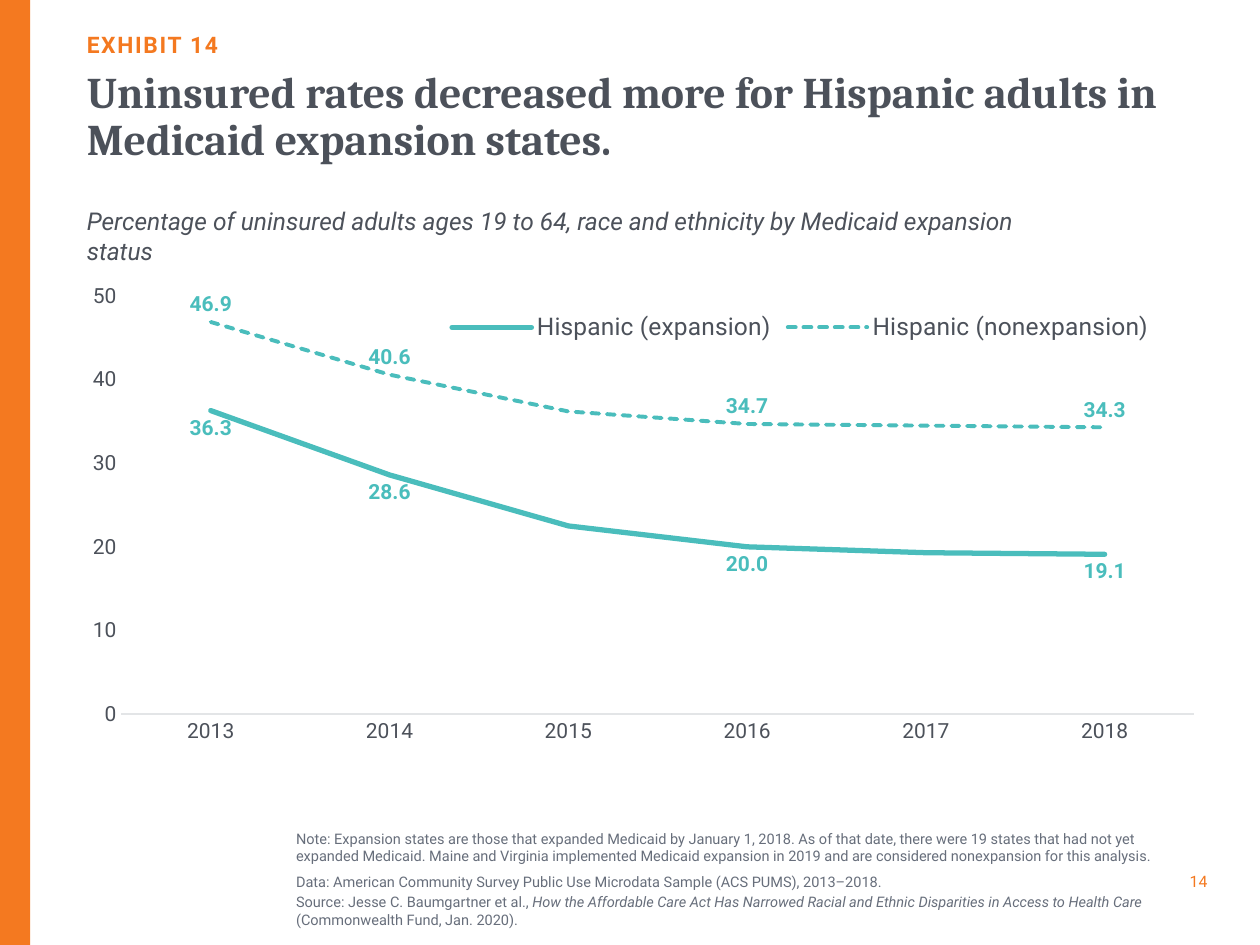
import pptx
import pptx.chart.data
import pptx.dml.color
import pptx.enum.chart
import pptx.enum.dml
import pptx.enum.shapes
import pptx.enum.text
import pptx.oxml
import pptx.oxml.ns
import pptx.util
from dataclasses import dataclass

Cm, Pt = pptx.util.Cm, pptx.util.Pt
RGB = pptx.dml.color.RGBColor.from_string
QN = pptx.oxml.ns.qn
CH = pptx.enum.chart
DASH = pptx.enum.dml.MSO_LINE
ANCHOR = pptx.enum.text.MSO_ANCHOR
ALIGN = pptx.enum.text.PP_ALIGN

# Content: each text is a list of paragraphs, each paragraph a list of (run, italic)
LABEL = [[("EXHIBIT 14", False)]]
TITLE = [[("Uninsured rates decreased more for Hispanic adults in "
           "Medicaid expansion states.", False)]]
LEAD = [[("Percentage of uninsured adults ages 19 to 64, race and ethnicity "
          "by Medicaid expansion status", True)]]
NOTES = [
    [("Note: Expansion states are those that expanded Medicaid by January 1, 2018. "
      "As of that date, there were 19 states that had not yet expanded Medicaid. "
      "Maine and Virginia implemented Medicaid expansion in 2019 and are considered "
      "nonexpansion for this analysis.", False)],
    [("Data: American Community Survey Public Use Microdata Sample (ACS PUMS), "
      "2013–2018.", False)],
    [("Source: Jesse C. Baumgartner et al., ", False),
     ("How the Affordable Care Act Has Narrowed Racial and Ethnic Disparities "
      "in Access to Health Care ", True),
     ("(Commonwealth Fund, Jan. 2020).", False)],
]
PAGE = [[("14", False)]]
YEARS = ["2013", "2014", "2015", "2016", "2017", "2018"]
BELOW, ABOVE = CH.XL_LABEL_POSITION.BELOW, CH.XL_LABEL_POSITION.ABOVE
# name, values, line width, dash, label place, label format
LINES = [
    ("Hispanic (expansion)", [36.3, 28.6, 22.5, 20, 19.3, 19.1],
     3, DASH.SOLID, BELOW, "#,##0.0"),
    ("Hispanic (nonexpansion)", [46.9, 40.6, 36.2, 34.7, 34.5, 34.3],
     2.25, DASH.SQUARE_DOT, ABOVE, "0.0"),
]
HIDDEN = [2, 4]  # points without a label


@dataclass
class Theme:
    sans: str = "Roboto"
    serif: str = "Cambria"
    orange: str = "F47920"
    dark: str = "4C515A"
    grey: str = "676E7B"
    teal: str = "4ABDBC"
    rule: str = "E3E5E7"
    title: float = 25
    lead: float = 14
    label: float = 13
    axis: float = 12
    page: float = 9
    note: float = 8.3


T = Theme()
LEFT, WIDE = 1.75, 22.48


def style(font, size, color, face=T.sans, bold=False):
    font.size, font.name, font.bold = Pt(size), face, bold
    font.color.rgb = RGB(color)


def write(slide, area, paras, size, color, face=T.sans, bold=False,
          anchor=ANCHOR.MIDDLE, align=ALIGN.LEFT):
    frame = slide.shapes.add_textbox(*map(Cm, area)).text_frame
    frame.word_wrap, frame.vertical_anchor = True, anchor
    frame.margin_left = frame.margin_right = 0
    frame.margin_top = frame.margin_bottom = 0
    for n, runs in enumerate(paras):
        para = frame.add_paragraph() if n else frame.paragraphs[0]
        para.alignment = align
        if n:
            para.space_before = Pt(size * 0.2)
        for words, slant in runs:
            run = para.add_run()
            run.text = words
            style(run.font, size, color, face, bold)
            run.font.italic = slant
    return frame


def place(part, spot, box, inner=False):
    """Give a chart part a manual layout, as shares of the chart."""
    for old in part.findall(QN("c:layout")):
        part.remove(old)
    rows = [("layoutTarget", "inner")] if inner else []
    rows += [("xMode", "edge"), ("yMode", "edge"), *zip("xywh", box)]
    body = "".join(f'<c:{tag} val="{val}"/>' for tag, val in rows)
    part.insert(spot, pptx.oxml.parse_xml(
        f'<c:layout {pptx.oxml.ns.nsdecls("c")}>'
        f'<c:manualLayout>{body}</c:manualLayout></c:layout>'))


def draw(slide):
    data = pptx.chart.data.CategoryChartData(number_format="0.0")
    data.categories = YEARS
    for name, vals, *_ in LINES:
        data.add_series(name, vals)
    area = map(Cm, (LEFT, 5.72, WIDE, 9.73))
    chart = slide.shapes.add_chart(CH.XL_CHART_TYPE.LINE, *area, data).chart
    chart.has_title = False
    style(chart.font, T.axis, T.dark)
    place(chart.plots[0]._element.getparent(), 0, (0.031, 0.02, 0.962, 0.871), True)

    # Axes
    cat, val = chart.category_axis, chart.value_axis
    for axis in (cat, val):
        axis.has_major_gridlines = False
        axis.major_tick_mark = axis.minor_tick_mark = CH.XL_TICK_MARK.NONE
        style(axis.tick_labels.font, T.axis, T.dark)
    cat.format.line.color.rgb = RGB(T.rule)
    cat.format.line.width = Pt(0.75)
    val.format.line.fill.background()
    val.minimum_scale, val.maximum_scale, val.major_unit = 0, 50, 10
    val.tick_labels.number_format = "0"
    val.tick_labels.number_format_is_linked = False

    # Legend
    chart.has_legend = True
    key = chart.legend
    key.position = CH.XL_LEGEND_POSITION.BOTTOM
    key.include_in_layout = False
    style(key.font, T.lead, T.dark)
    place(key._element, 1, (0.32, 0.04, 0.64, 0.09))

    # Lines and their labels
    for ser, (_, _, width, dash, pos, code) in zip(chart.plots[0].series, LINES):
        ser.smooth = False
        ser.marker.style = CH.XL_MARKER_STYLE.NONE
        line = ser.format.line
        line.color.rgb, line.width, line.dash_style = RGB(T.teal), Pt(width), dash
        ser._element.find(QN("c:spPr")).find(QN("a:ln")).set("cap", "rnd")
        tags = ser.data_labels
        tags.show_value, tags.position = True, pos
        tags.number_format, tags.number_format_is_linked = code, False
        style(tags.font, T.axis, T.teal, bold=True)
        for n, point in enumerate(HIDDEN):
            tags._element.insert(n, pptx.oxml.parse_xml(
                f'<c:dLbl {pptx.oxml.ns.nsdecls("c")}><c:idx val="{point}"/>'
                '<c:delete val="1"/></c:dLbl>'))


def main():
    deck = pptx.Presentation()
    deck.slide_width, deck.slide_height = Cm(25.4), Cm(19.05)
    slide = deck.slides.add_slide(deck.slide_layouts[6])

    # Side band
    band = slide.shapes.add_shape(pptx.enum.shapes.MSO_SHAPE.RECTANGLE,
                                  0, 0, Cm(0.61), deck.slide_height)
    band.shadow.inherit = False
    band.fill.solid()
    band.fill.fore_color.rgb = RGB(T.orange)
    band.line.fill.background()

    # Heading
    label = write(slide, (LEFT, 0.48, WIDE, 0.69), LABEL, T.label, T.orange,
                  bold=True, anchor=ANCHOR.BOTTOM)
    label.paragraphs[0].runs[0].font._element.set("spc", "100")
    title = write(slide, (LEFT, 1.42, WIDE, 3.3), TITLE, T.title, T.dark,
                  T.serif, True, ANCHOR.TOP)
    title.paragraphs[0].line_spacing = 0.9

    # Chart and its lead
    draw(slide)
    write(slide, (LEFT, 4.45, 19.1, 0.61), LEAD, T.lead, T.dark)

    # Notes and page number
    notes = write(slide, (5.97, 16.64, 17.58, 2.16), NOTES, T.note, T.grey)
    notes.paragraphs[0].space_after = Pt(3)
    write(slide, (23.55, 17.48, 0.79, 0.56), PAGE, T.page, T.orange,
          align=ALIGN.RIGHT)
    deck.save("out.pptx")


if __name__ == "__main__":
    main()
